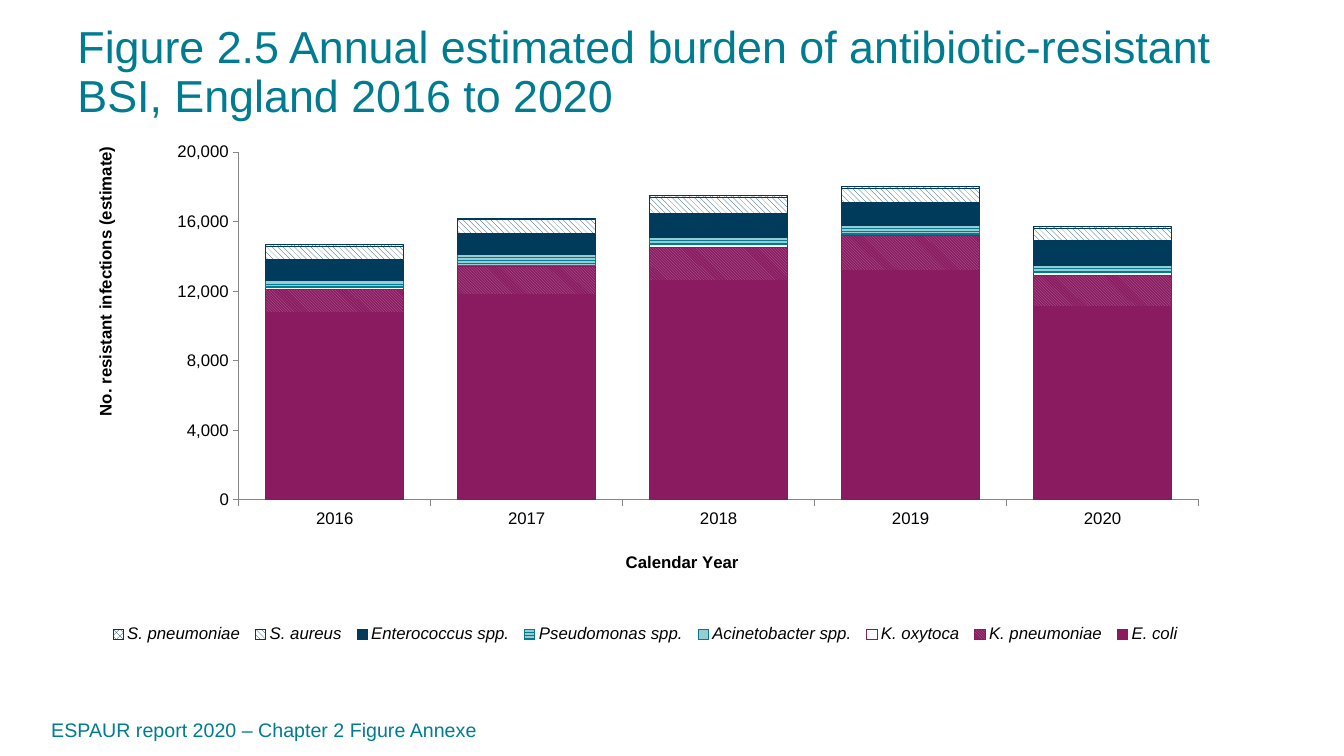
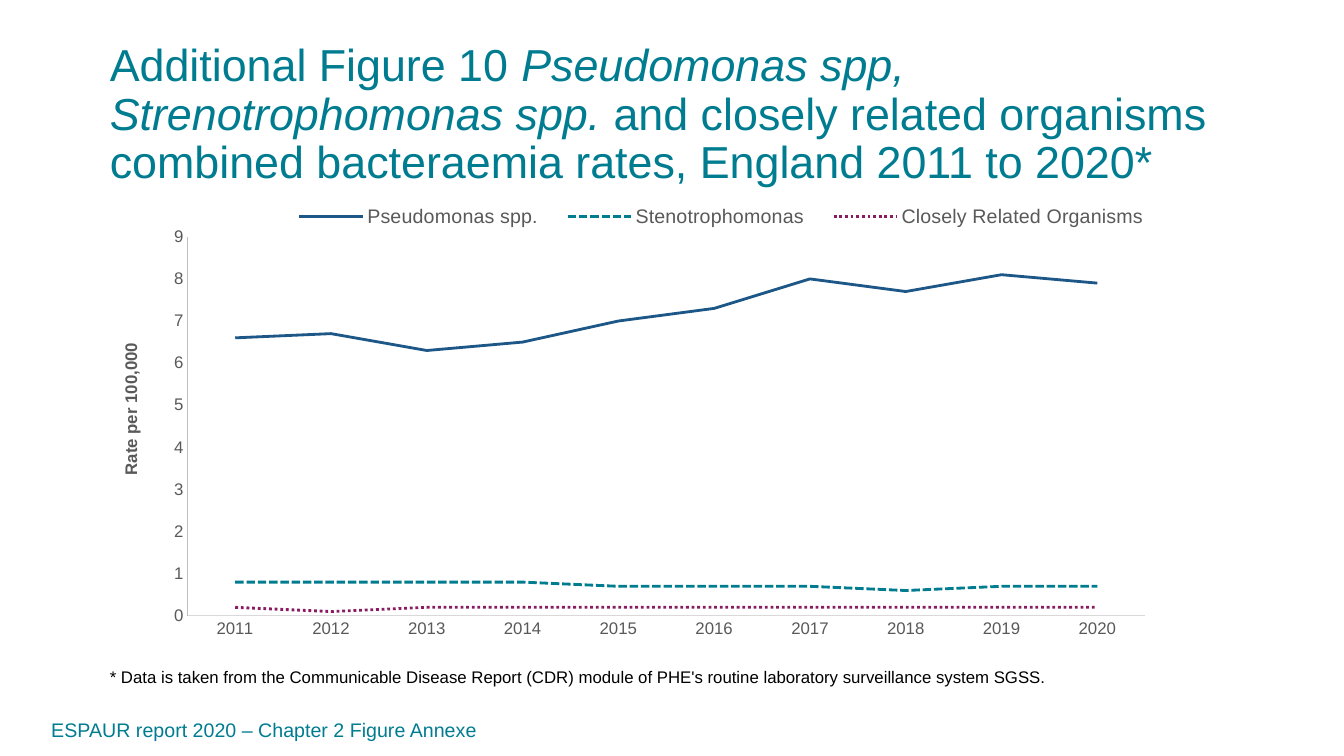
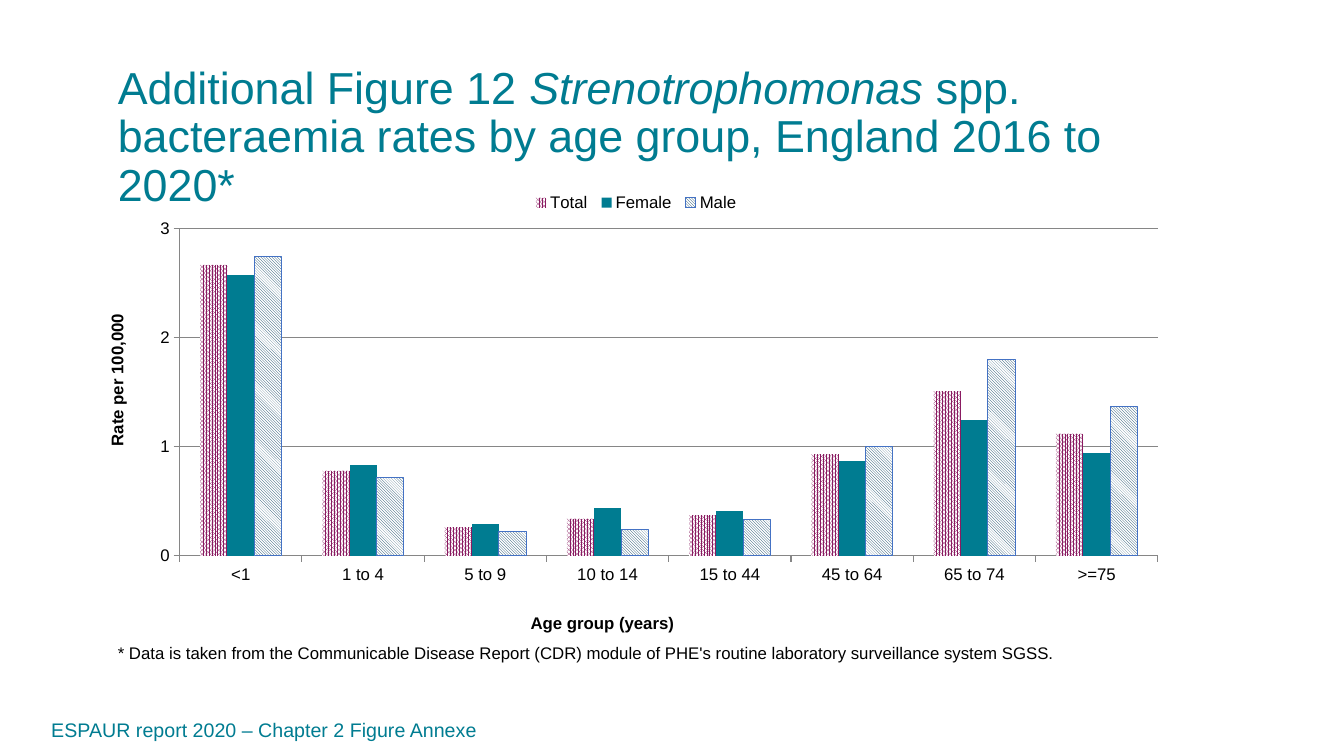
from dataclasses import dataclass
from typing import NamedTuple, Optional

from lxml.etree import SubElement
from pptx import Presentation
from pptx.chart.axis import CategoryAxis, ValueAxis
from pptx.chart.chart import Chart
from pptx.chart.data import CategoryChartData
from pptx.dml.color import RGBColor
from pptx.dml.fill import FillFormat
from pptx.enum.chart import XL_CHART_TYPE, XL_LEGEND_POSITION, XL_TICK_MARK
from pptx.enum.dml import MSO_LINE, MSO_PATTERN
from pptx.enum.text import MSO_ANCHOR, PP_ALIGN
from pptx.oxml.ns import qn
from pptx.oxml.xmlchemy import BaseOxmlElement
from pptx.slide import Slide
from pptx.text.text import Font
from pptx.util import Inches, Pt

COLORS = {
    "teal": "007C91",
    "pale teal": "99CBD3",
    "plum": "8A1B61",
    "pale plum": "B976A0",
    "navy": "003B5C",
    "blue": "1D5787",
    "outline blue": "4472C4",
    "black": "000000",
    "white": "FFFFFF",
    "axis gray": "868686",
    "text gray": "595959",
    "value line": "BFBFBF",
    "category line": "D9D9D9",
}
FONT = "Arial"
FOOTER = "ESPAUR report 2020 – Chapter 2 Figure Annexe"
FOOTNOTE = (
    "* Data is taken from the Communicable Disease Report (CDR) module of "
    "PHE's routine laboratory surveillance system SGSS."
)


class Box(NamedTuple):
    left: float
    top: float
    width: float
    height: float


class Span(NamedTuple):
    text: str
    italic: bool = False


class Pattern(NamedTuple):
    kind: MSO_PATTERN
    fore: str
    back: str


@dataclass(frozen=True)
class Series:
    name: str
    values: list[float]
    fill: str | Pattern | None = None
    line: Optional[str] = None
    width: float = 0.75
    dash: Optional[MSO_LINE] = None


@dataclass(frozen=True)
class AxisStyle:
    line: str = "axis gray"
    tick: XL_TICK_MARK = XL_TICK_MARK.OUTSIDE
    title: Optional[str] = None
    title_at: tuple[float, float] = (0, 0)


@dataclass(frozen=True)
class ChartStyle:
    kind: XL_CHART_TYPE
    box: Box
    plot: Box
    legend: Box
    categories: list[str]
    series: list[Series]
    category_axis: AxisStyle
    value_axis: AxisStyle
    maximum: float
    step: float
    number_format: str = "#,##0"
    text_color: str = "black"
    legend_position: XL_LEGEND_POSITION = XL_LEGEND_POSITION.TOP
    legend_size: float = 12
    legend_italic: bool = False
    gap: int = 150
    overlap: int = 0
    grid: bool = False


@dataclass(frozen=True)
class FigureSlide:
    title: list[Span]
    title_box: Box
    chart: ChartStyle
    footnote_box: Optional[Box] = None


FIGURES = [
    FigureSlide(
        title=[Span("Figure 2.5 Annual estimated burden of antibiotic-resistant BSI, England 2016 to 2020")],
        title_box=Box(0.67, 0.2, 12.17, 1.06),
        chart=ChartStyle(
            kind=XL_CHART_TYPE.COLUMN_STACKED,
            box=Box(0.8, 1.26, 11.2, 5.44),
            plot=Box(0.14, 0.046, 0.85, 0.634),
            legend=Box(0.02, 0.89, 0.96, 0.07),
            categories=["2016", "2017", "2018", "2019", "2020"],
            series=[
                Series("E. coli", [10800, 11800, 12600, 13200, 11100], "plum", "plum"),
                Series("K. pneumoniae", [1300, 1600, 1900, 2000, 1800],
                       Pattern(MSO_PATTERN.DARK_DOWNWARD_DIAGONAL, "pale plum", "plum"), "plum"),
                Series("K. oxytoca", [100, 100, 200, 100, 200], None, "plum"),
                Series("Acinetobacter spp.", [0, 100, 0, 0, 0], "pale teal", "teal"),
                Series("Pseudomonas spp.", [400, 500, 400, 500, 400],
                       Pattern(MSO_PATTERN.ZIG_ZAG, "teal", "pale teal"), "teal"),
                Series("Enterococcus spp.", [1200, 1200, 1400, 1300, 1400], "navy", "navy"),
                Series("S. aureus", [800, 800, 900, 800, 700],
                       Pattern(MSO_PATTERN.WIDE_DOWNWARD_DIAGONAL, "navy", "white"), "navy"),
                Series("S. pneumoniae", [100, 100, 100, 100, 100],
                       Pattern(MSO_PATTERN.PERCENT_50, "navy", "white"), "navy"),
            ],
            category_axis=AxisStyle(title="Calendar Year", title_at=(0.48, 0.77)),
            value_axis=AxisStyle(title="No. resistant infections (estimate)", title_at=(0.01, 0.03)),
            maximum=20000,
            step=4000,
            legend_position=XL_LEGEND_POSITION.RIGHT,
            legend_italic=True,
            gap=39,
            overlap=100,
        ),
    ),
    FigureSlide(
        title=[
            Span("Additional Figure 10 "),
            Span("Pseudomonas spp, Strenotrophomonas spp. ", True),
            Span("and closely related organisms combined bacteraemia rates, England 2011 to 2020*"),
        ],
        title_box=Box(0.99, 0.38, 11.28, 0.71),
        footnote_box=Box(0.99, 6.57, 9.85, 0.3),
        chart=ChartStyle(
            kind=XL_CHART_TYPE.LINE,
            box=Box(1.06, 1.8, 10.51, 4.62),
            plot=Box(0.076, 0.119, 0.904, 0.814),
            legend=Box(0.16, 0.04, 0.84, 0.07),
            categories=[str(year) for year in range(2011, 2021)],
            series=[
                Series("Pseudomonas spp.", [6.6, 6.7, 6.3, 6.5, 7, 7.3, 8, 7.7, 8.1, 7.9],
                       line="blue", width=2),
                Series("Stenotrophomonas", [0.8, 0.8, 0.8, 0.8, 0.7, 0.7, 0.7, 0.6, 0.7, 0.7],
                       line="teal", width=2, dash=MSO_LINE.SQUARE_DOT),
                Series("Closely Related Organisms", [0.2, 0.1, 0.2, 0.2, 0.2, 0.2, 0.2, 0.2, 0.2, 0.2],
                       line="plum", width=2, dash=MSO_LINE.ROUND_DOT),
            ],
            category_axis=AxisStyle("category line", XL_TICK_MARK.NONE),
            value_axis=AxisStyle("value line", XL_TICK_MARK.NONE, "Rate per 100,000", (0.01, 0.34)),
            maximum=9,
            step=1,
            number_format="General",
            text_color="text gray",
            legend_size=14,
        ),
    ),
    FigureSlide(
        title=[
            Span("Additional Figure 12 "),
            Span("Strenotrophomonas", True),
            Span(" spp. bacteraemia rates by age group, England 2016 to 2020*"),
        ],
        title_box=Box(1.07, 0.6, 10.86, 0.71),
        footnote_box=Box(1.07, 6.33, 10.29, 0.3),
        chart=ChartStyle(
            kind=XL_CHART_TYPE.COLUMN_CLUSTERED,
            box=Box(0.92, 1.76, 10.78, 4.57),
            plot=Box(0.08, 0.112, 0.9, 0.71),
            legend=Box(0.4, 0.02, 0.2, 0.07),
            categories=["<1", "1 to 4", "5 to 9", "10 to 14", "15 to 44", "45 to 64", "65 to 74", ">=75"],
            series=[
                Series("Total", [2.67, 0.78, 0.26, 0.34, 0.37, 0.93, 1.51, 1.12],
                       Pattern(MSO_PATTERN.PERCENT_80, "plum", "white")),
                Series("Female", [2.58, 0.83, 0.29, 0.44, 0.41, 0.87, 1.25, 0.94], "teal"),
                Series("Male", [2.75, 0.72, 0.22, 0.24, 0.33, 1, 1.8, 1.37],
                       Pattern(MSO_PATTERN.DARK_DOWNWARD_DIAGONAL, "navy", "white"), "outline blue"),
            ],
            category_axis=AxisStyle(title="Age group (years)", title_at=(0.4, 0.94)),
            value_axis=AxisStyle(title="Rate per 100,000", title_at=(0.01, 0.29)),
            maximum=3,
            step=1,
            grid=True,
        ),
    ),
]


def color(name: str) -> RGBColor:
    return RGBColor.from_string(COLORS[name])


def style_font(font: Font, size: float, color_name: str) -> None:
    font.name = FONT
    font.size = Pt(size)
    font.color.rgb = color(color_name)


def add_text(slide: Slide, box: Box, spans: list[Span], size: float, color_name: str,
             align: PP_ALIGN = PP_ALIGN.LEFT, anchor: MSO_ANCHOR = MSO_ANCHOR.TOP,
             line_spacing: float = 1.0) -> None:
    shape = slide.shapes.add_textbox(*map(Inches, box))
    frame = shape.text_frame
    frame.word_wrap = True
    frame.vertical_anchor = anchor
    paragraph = frame.paragraphs[0]
    paragraph.alignment = align
    paragraph.line_spacing = line_spacing
    style_font(paragraph.font, size, color_name)
    for span in spans:
        run = paragraph.add_run()
        run.text = span.text
        if span.italic:
            run.font.italic = True


def set_layout(element: BaseOxmlElement, fractions: tuple[float, ...], inner: bool = False) -> None:
    for old_layout in element.findall(qn("c:layout")):
        element.remove(old_layout)
    layout = SubElement(element, qn("c:layout"))
    leading = [child for child in element if child.tag in (qn("c:tx"), qn("c:legendPos"))]
    element.insert(len(leading), layout)
    manual = SubElement(layout, qn("c:manualLayout"))
    settings = [("layoutTarget", "inner")] if inner else []
    settings += [("xMode", "edge"), ("yMode", "edge")]
    settings += [(name, str(value)) for name, value in zip("xywh", fractions)]
    for name, value in settings:
        SubElement(manual, qn(f"c:{name}")).set("val", value)


def style_fill(fill: FillFormat, paint: str | Pattern | None) -> None:
    if paint is None:
        fill.background()
    elif isinstance(paint, Pattern):
        fill.patterned()
        fill.pattern = paint.kind
        fill.fore_color.rgb = color(paint.fore)
        fill.back_color.rgb = color(paint.back)
    else:
        fill.solid()
        fill.fore_color.rgb = color(paint)


def style_axis(axis: CategoryAxis | ValueAxis, style: AxisStyle, text_color: str) -> None:
    axis.major_tick_mark = style.tick
    axis.minor_tick_mark = XL_TICK_MARK.NONE
    axis.format.line.color.rgb = color(style.line)
    axis.format.line.width = Pt(0.75)
    style_font(axis.tick_labels.font, 12, text_color)
    axis.has_title = style.title is not None
    if style.title:
        title = axis.axis_title
        title.text_frame.text = style.title
        font = title.text_frame.paragraphs[0].font
        style_font(font, 12, text_color)
        font.bold = True
        set_layout(title._element, style.title_at)


def style_series(chart: Chart, style: ChartStyle) -> None:
    plot = chart.plots[0]
    plot.vary_by_categories = False
    is_line = style.kind == XL_CHART_TYPE.LINE
    if not is_line:
        plot.gap_width = style.gap
        plot.overlap = style.overlap
    for series, series_style in zip(plot.series, style.series):
        if is_line:
            series.smooth = False
        else:
            style_fill(series.format.fill, series_style.fill)
        line = series.format.line
        if series_style.line is None:
            line.fill.background()
            continue
        line.color.rgb = color(series_style.line)
        line.width = Pt(series_style.width)
        if series_style.dash:
            line.dash_style = series_style.dash


def add_figure_chart(slide: Slide, style: ChartStyle) -> None:
    data = CategoryChartData()
    data.categories = style.categories
    for series in style.series:
        data.add_series(series.name, series.values)
    chart = slide.shapes.add_chart(style.kind, *map(Inches, style.box), data).chart
    chart.has_title = False
    style_font(chart.font, 12, style.text_color)
    style_series(chart, style)

    style_axis(chart.category_axis, style.category_axis, style.text_color)
    value_axis = chart.value_axis
    style_axis(value_axis, style.value_axis, style.text_color)
    value_axis.minimum_scale = 0
    value_axis.maximum_scale = style.maximum
    value_axis.major_unit = style.step
    value_axis.tick_labels.number_format = style.number_format
    value_axis.tick_labels.number_format_is_linked = False
    value_axis.has_major_gridlines = style.grid
    if style.grid:
        value_axis.major_gridlines.format.line.color.rgb = color("axis gray")

    chart.has_legend = True
    legend = chart.legend
    legend.position = style.legend_position
    legend.include_in_layout = False
    style_font(legend.font, style.legend_size, style.text_color)
    legend.font.italic = style.legend_italic
    set_layout(legend._element, style.legend)
    set_layout(chart._chartSpace.find(f".//{qn('c:plotArea')}"), style.plot, inner=True)


def add_figure_slide(presentation: Presentation, figure: FigureSlide) -> None:
    slide = presentation.slides.add_slide(presentation.slide_layouts[6])
    add_text(slide, figure.title_box, figure.title, 32, "teal", line_spacing=0.9)
    add_figure_chart(slide, figure.chart)
    if figure.footnote_box:
        add_text(slide, figure.footnote_box, [Span(FOOTNOTE)], 12, "black")
    add_text(slide, Box(0.14, 7.04, 4.69, 0.4), [Span(FOOTER)], 14, "teal",
             PP_ALIGN.RIGHT, MSO_ANCHOR.MIDDLE)


def main() -> None:
    presentation = Presentation()
    presentation.slide_width = Inches(13.33)
    presentation.slide_height = Inches(7.5)
    for figure in FIGURES:
        add_figure_slide(presentation, figure)
    presentation.save("out.pptx")


if __name__ == "__main__":
    main()
